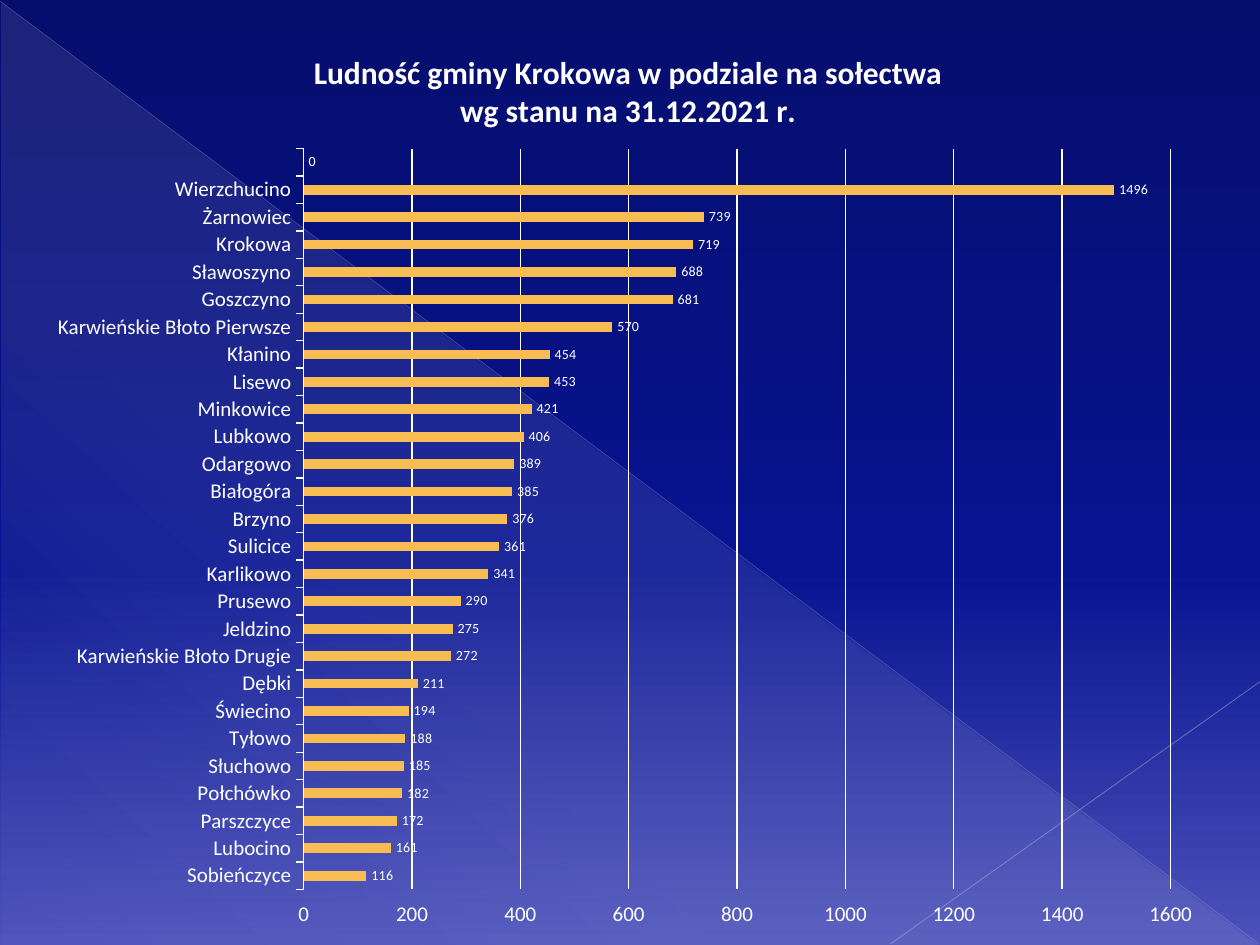
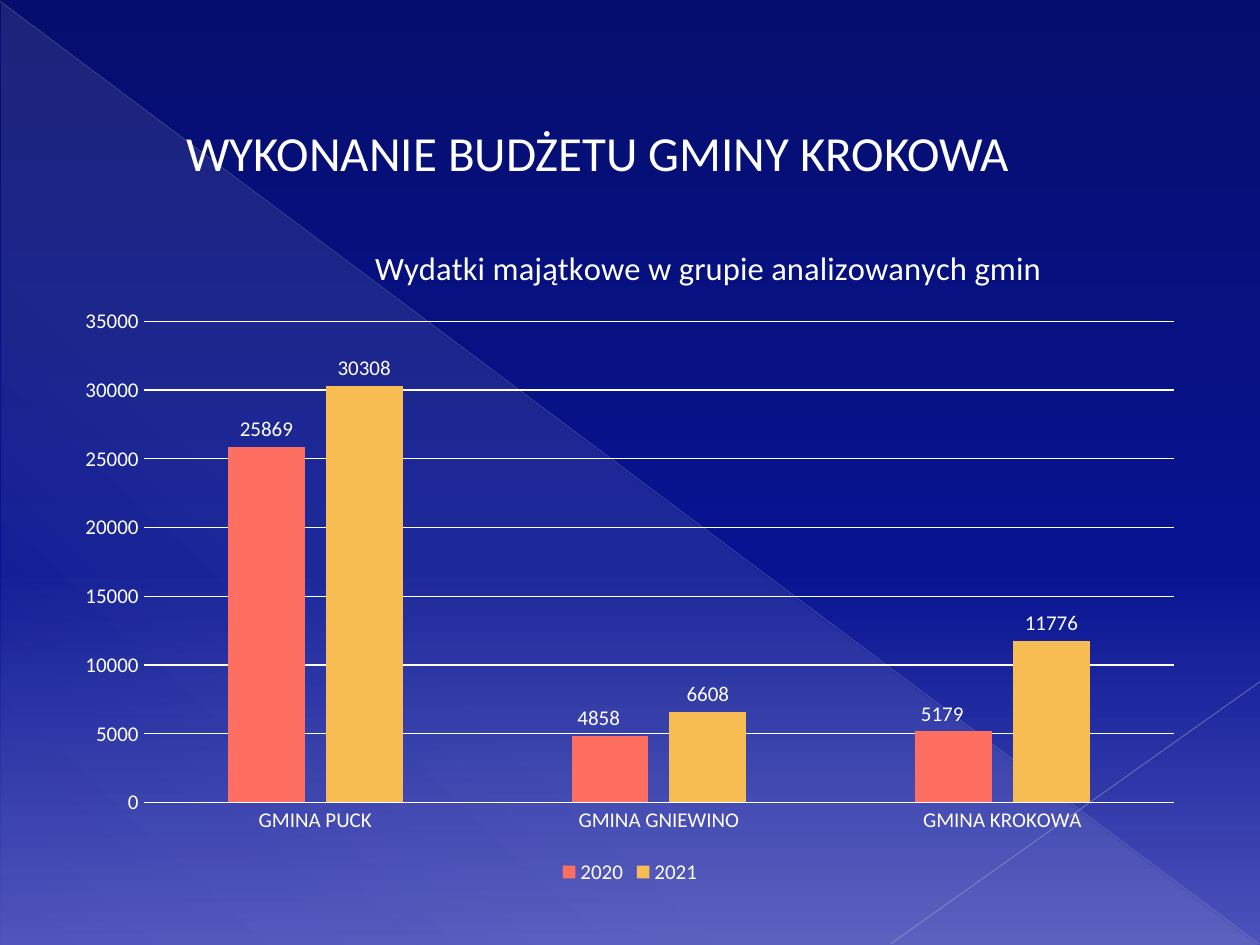
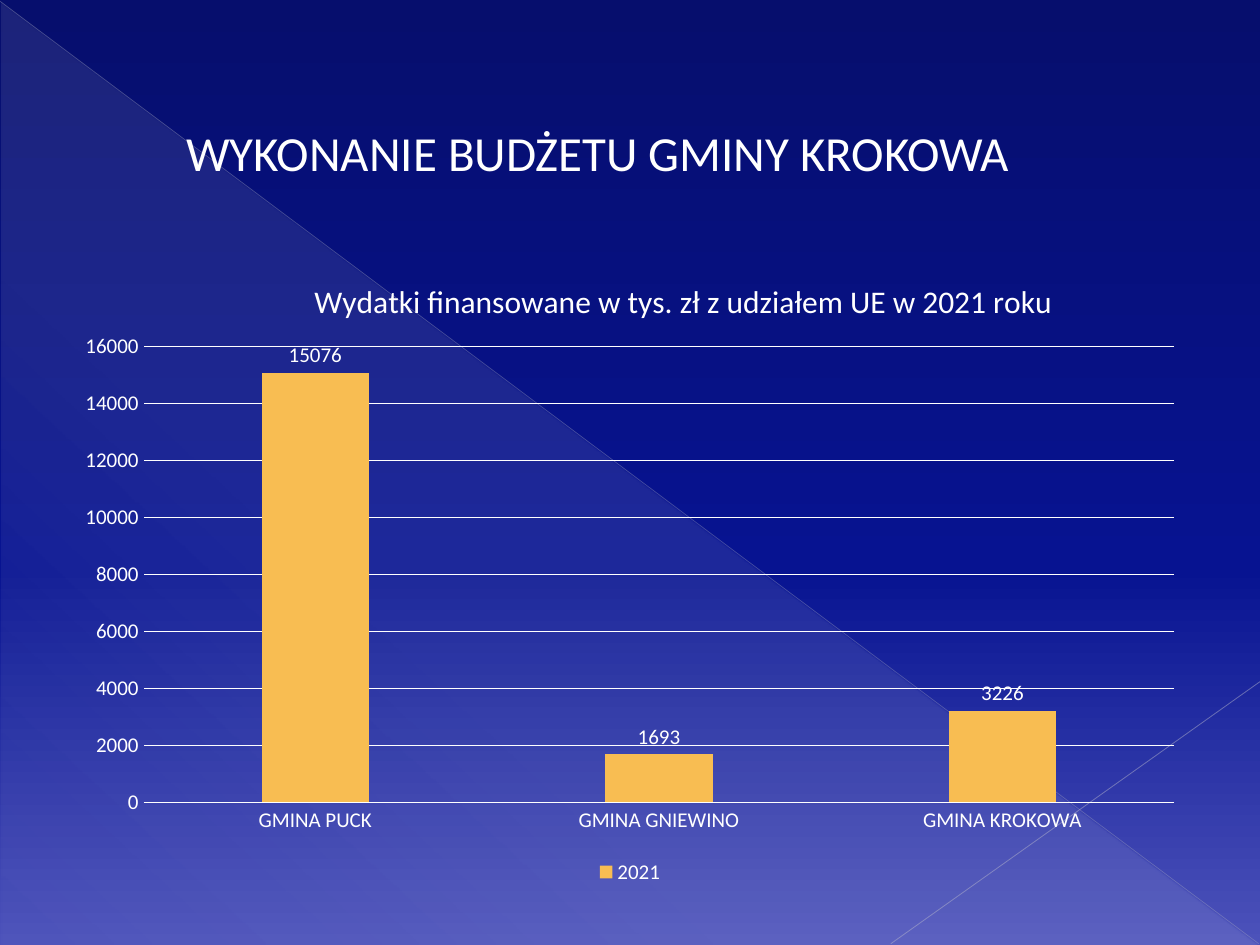
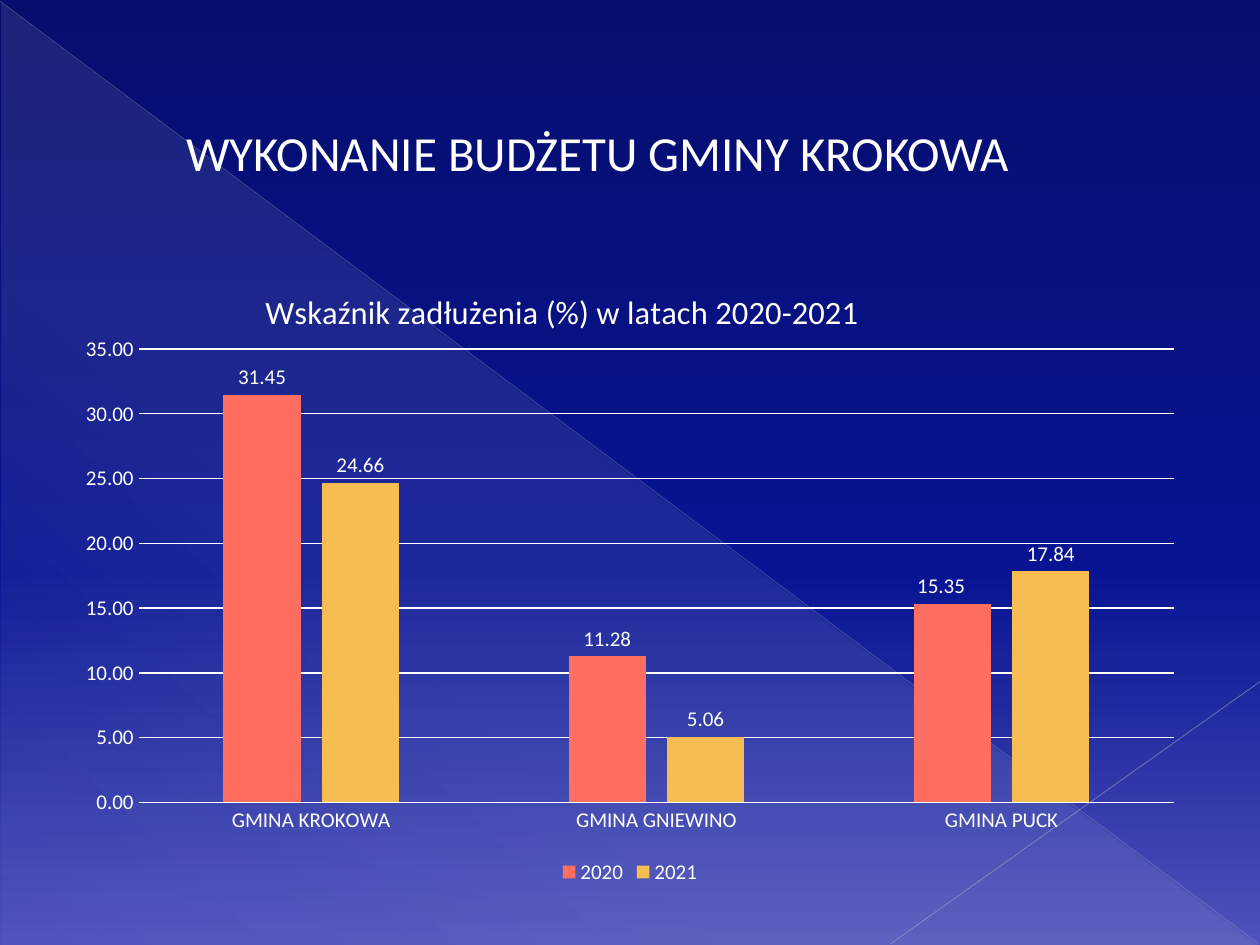
from lxml.etree import SubElement
from pptx import Presentation
from pptx.chart.data import CategoryChartData
from pptx.dml.color import RGBColor
from pptx.enum.chart import XL_CHART_TYPE as ChartType
from pptx.enum.chart import XL_LABEL_POSITION as LabelPosition
from pptx.enum.chart import XL_LEGEND_POSITION as LegendPosition
from pptx.enum.chart import XL_TICK_MARK as TickMark
from pptx.enum.shapes import MSO_CONNECTOR as Connector
from pptx.enum.shapes import MSO_SHAPE as Shape
from pptx.enum.text import MSO_ANCHOR as Anchor
from pptx.enum.text import MSO_AUTO_SIZE as AutoSize
from pptx.enum.text import PP_ALIGN as Align
from pptx.oxml.ns import qn
from pptx.util import Inches, Pt

FONT = "Calibri"
WHITE = "FFFFFF"
CORAL = "FF6F61"
AMBER = "F8BD52"
BACKDROP = [(0, "060E6D", 100), (60, "071391", 100), (100, "4C52BA", 100)]
VEIL = [(0, WHITE, 10), (70, WHITE, 8), (100, WHITE, 1)]
BUDGET_TITLE = "WYKONANIE BUDŻETU GMINY KROKOWA"

VILLAGES = [
    ("Sobieńczyce", 116), ("Lubocino", 161), ("Parszczyce", 172),
    ("Połchówko", 182), ("Słuchowo", 185), ("Tyłowo", 188),
    ("Świecino", 194), ("Dębki", 211), ("Karwieńskie Błoto Drugie", 272),
    ("Jeldzino", 275), ("Prusewo", 290), ("Karlikowo", 341),
    ("Sulicice", 361), ("Brzyno", 376), ("Białogóra", 385),
    ("Odargowo", 389), ("Lubkowo", 406), ("Minkowice", 421),
    ("Lisewo", 453), ("Kłanino", 454), ("Karwieńskie Błoto Pierwsze", 570),
    ("Goszczyno", 681), ("Sławoszyno", 688), ("Krokowa", 719),
    ("Żarnowiec", 739), ("Wierzchucino", 1496), (" ", 0),
]


def color(value):
    return RGBColor.from_string(value)


def style_font(font, size, bold=False):
    font.name = FONT
    font.size = Pt(size)
    font.bold = bold
    font.color.rgb = color(WHITE)


def set_alpha(color_element, percent):
    SubElement(color_element, qn("a:alpha"), val=str(percent * 1000))


def set_gradient(fill, element, stops, angle):
    fill.gradient()
    gradient = element.xpath(".//a:gradFill")[0]
    for child in list(gradient):
        gradient.remove(child)
    stop_list = SubElement(gradient, qn("a:gsLst"))
    for position, value, opacity in stops:
        stop = SubElement(stop_list, qn("a:gs"), pos=str(position * 1000))
        set_alpha(SubElement(stop, qn("a:srgbClr"), val=value), opacity)
    SubElement(gradient, qn("a:lin"), ang=str(angle * 60000), scaled="0")


def add_veil(slide):
    veil = slide.shapes.add_shape(
        Shape.RIGHT_TRIANGLE, Inches(0.01), Inches(0.02), Inches(9.98), Inches(7.48))
    veil.shadow.inherit = False
    veil.line.fill.background()
    set_gradient(veil.fill, veil.element, VEIL, 133)
    return veil


def add_ray(slide, start, end, value, width, opacity):
    ray = slide.shapes.add_connector(
        Connector.STRAIGHT, *(Inches(length) for length in start + end))
    ray.line.color.rgb = color(value)
    ray.line.width = Pt(width)
    set_alpha(ray.element.xpath(".//a:ln//a:srgbClr")[0], opacity)
    SubElement(ray.element.spPr, qn("a:effectLst"))
    return ray


def decorate_master(deck, slide):
    master = deck.slide_master
    set_gradient(master.background.fill, master.element, BACKDROP, 90)
    decorations = [
        add_veil(slide),
        add_ray(slide, (0, 0.01), (9.99, 7.49), "B1B2C7", 0.39, 35),
        add_ray(slide, (10, 5.41), (7.07, 7.49), "BABACD", 0.47, 45),
    ]
    for index, shape in enumerate(decorations):
        shape.element.xpath(".//p:cNvPr")[0].set("id", str(100 + index))
        master.shapes.element.insert(2 + index, shape.element)


def set_layout(parent, index, **settings):
    for old in parent.findall(qn("c:layout")):
        parent.remove(old)
    layout = parent.makeelement(qn("c:layout"))
    parent.insert(index, layout)
    manual = SubElement(layout, qn("c:manualLayout"))
    for name, value in settings.items():
        SubElement(manual, qn("c:" + name), val=str(value))


def place_in_chart(parent, index, frame, left, top, right=None, bottom=None):
    chart_left, chart_top, width, height = frame
    settings = {"xMode": "edge", "yMode": "edge",
                "x": round((left - chart_left) / width, 4),
                "y": round((top - chart_top) / height, 4)}
    if right is not None:
        settings = {"layoutTarget": "inner", **settings,
                    "w": round((right - left) / width, 4),
                    "h": round((bottom - top) / height, 4)}
    set_layout(parent, index, **settings)


def style_axes(chart, tick_mark, number_format):
    for axis in (chart.category_axis, chart.value_axis):
        axis.major_tick_mark = tick_mark
        axis.minor_tick_mark = TickMark.NONE
        style_font(axis.tick_labels.font, 12)
    line = chart.category_axis.format.line
    line.color.rgb = color(WHITE)
    line.width = Pt(0.75)
    values = chart.value_axis
    values.format.line.fill.background()
    values.has_major_gridlines = True
    values.major_gridlines.format.line.color.rgb = color(WHITE)
    values.major_gridlines.format.line.width = Pt(0.75)
    values.tick_labels.number_format = number_format
    values.tick_labels.number_format_is_linked = False


def style_series(series, value, label_size, number_format):
    series.format.fill.solid()
    series.format.fill.fore_color.rgb = color(value)
    series.invert_if_negative = False
    labels = series.data_labels
    labels.show_value = True
    labels.position = LabelPosition.OUTSIDE_END
    labels.number_format = number_format
    labels.number_format_is_linked = False
    style_font(labels.font, label_size)


def nudge_label(series, point, shift):
    label = series.points[point].data_label
    style_font(label.font, 12)
    label.position = LabelPosition.OUTSIDE_END
    element = series.data_labels._element.xpath(f'c:dLbl[c:idx/@val="{point}"]')[0]
    set_layout(element, 1, x=shift, y=0)


def add_bar_chart(slide, kind, frame, plot_box, title, title_at, title_size,
                  categories, series_list, gap, overlap=0, bold=False,
                  label_size=12, tick_mark=TickMark.NONE, number_format="0",
                  legend=True):
    data = CategoryChartData(number_format=number_format)
    data.categories = categories
    for name, values, _ in series_list:
        data.add_series(name, values)
    chart = slide.shapes.add_chart(
        kind, *(Inches(length) for length in frame), data).chart
    style_font(chart.font, 10)

    chart.has_title = True
    heading = chart.chart_title
    heading.text_frame.text = title
    for para in heading.text_frame.paragraphs:
        para.alignment = Align.CENTER
        for span in para.runs:
            style_font(span.font, title_size, bold)
    place_in_chart(heading._element, 1, frame, *title_at)

    plot = chart.plots[0]
    plot.vary_by_categories = False
    plot.gap_width = gap
    plot.overlap = overlap
    for series, (_, _, value) in zip(plot.series, series_list):
        style_series(series, value, label_size, number_format)
    style_axes(chart, tick_mark, number_format)
    place_in_chart(chart._chartSpace.xpath("c:chart/c:plotArea")[0], 0, frame, *plot_box)

    chart.has_legend = legend
    if legend:
        chart.legend.position = LegendPosition.BOTTOM
        chart.legend.include_in_layout = False
        style_font(chart.legend.font, 12)
    return chart


def add_budget_slide(deck, frame, plot_box, title, title_at, title_size,
                     categories, series_list, nudges, number_format="0"):
    slide = deck.slides.add_slide(deck.slide_layouts.get_by_name("Title Only"))
    chart = add_bar_chart(
        slide, ChartType.COLUMN_CLUSTERED, frame, plot_box, title, title_at,
        title_size, categories, series_list, gap=219, overlap=-27,
        number_format=number_format)
    for point, shift in nudges.items():
        nudge_label(chart.plots[0].series[0], point, shift)

    box = slide.shapes.title
    box.left, box.top = Inches(1.38), Inches(0.92)
    box.width, box.height = Inches(6.8), Inches(0.57)
    frame_text = box.text_frame
    frame_text.text = BUDGET_TITLE
    frame_text.word_wrap = False
    frame_text.auto_size = AutoSize.SHAPE_TO_FIT_TEXT
    frame_text.vertical_anchor = Anchor.TOP
    para = frame_text.paragraphs[0]
    para.alignment = Align.LEFT
    style_font(para.runs[0].font, 28)


def add_population_slide(deck):
    slide = deck.slides.add_slide(deck.slide_layouts.get_by_name("Blank"))
    decorate_master(deck, slide)
    names, residents = zip(*VILLAGES)
    add_bar_chart(
        slide, ChartType.BAR_CLUSTERED, (0.28, 0.13, 9.37, 7.37),
        (2.41, 1.18, 9.29, 7.06),
        "Ludność gminy Krokowa w podziale na sołectwa\nwg stanu na 31.12.2021 r.",
        (2.46, 0.38), 18, names, [("Series 1", residents, AMBER)], gap=182,
        bold=True, label_size=8, tick_mark=TickMark.OUTSIDE, legend=False)


def main():
    deck = Presentation()
    deck.slide_width, deck.slide_height = Inches(10), Inches(7.5)
    add_population_slide(deck)

    communes = ["GMINA PUCK", "GMINA GNIEWINO", "GMINA KROKOWA"]
    short_frame = (0.5, 1.94, 9, 5.12)
    add_budget_slide(
        deck, (0.5, 1.7, 9, 5.36), (1.14, 2.55, 9.32, 6.37),
        "Wydatki majątkowe w grupie analizowanych gmin", (2.93, 1.9), 18.6,
        communes,
        [("2020", (25869, 4858, 5179), CORAL), ("2021", (30308, 6608, 11776), AMBER)],
        {1: -0.01, 2: -0.01})
    add_budget_slide(
        deck, short_frame, (1.14, 2.75, 9.32, 6.37),
        "Wydatki finansowane w tys. zł z udziałem UE w 2021 roku", (2.45, 2.17), 18,
        communes, [("2021", (15076, 1693, 3226), AMBER)], {})
    add_budget_slide(
        deck, short_frame, (1.1, 2.77, 9.32, 6.37),
        "Wskaźnik zadłużenia (%) w latach 2020-2021", (2.06, 2.25), 18.6,
        communes[::-1],
        [("2020", (31.45, 11.28, 15.35), CORAL), ("2021", (24.66, 5.06, 17.84), AMBER)],
        {2: -0.01}, "0.00")
    deck.save("out.pptx")


if __name__ == "__main__":
    main()
